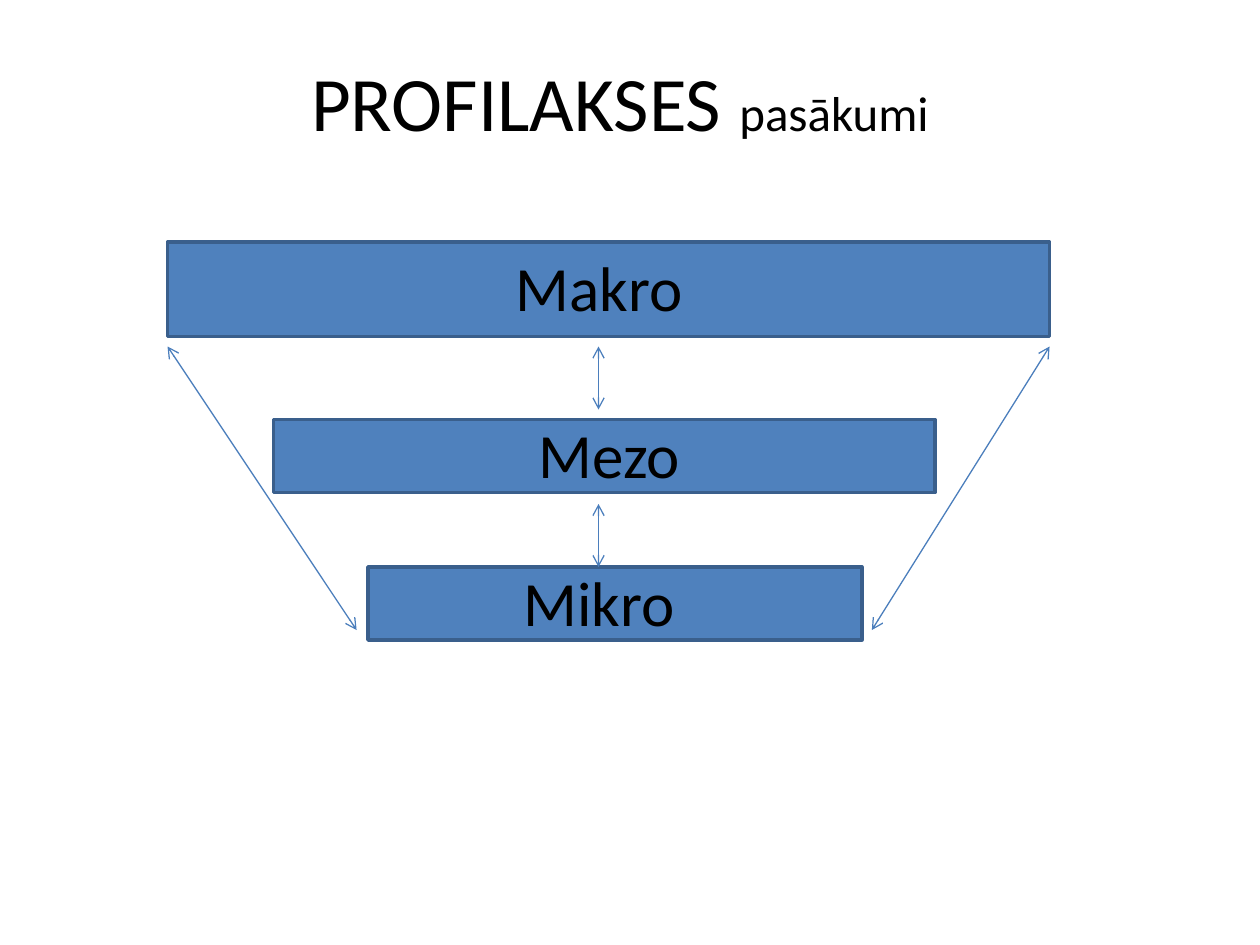
"""Build the slide on the three levels of prevention measures."""
from lxml.etree import SubElement
from pptx import Presentation
from pptx.dml.color import RGBColor
from pptx.enum.shapes import MSO_CONNECTOR, MSO_SHAPE
from pptx.enum.text import MSO_ANCHOR, PP_ALIGN
from pptx.oxml.ns import qn
from pptx.util import Inches, Pt

COLORS = {"bar": "4F81BD", "border": "3A5F8C", "arrow": "4B7EBC", "text": "000000"}
FONT = "Calibri"
TITLE = [("PROFILAKSES ", 44), ("pasākumi", 28)]
TITLE_BOX = (0.42, 0.17, 9, 1.25)
LABEL_SIZE = 36
LABEL_WIDTH, LABEL_HEIGHT = 5.17, 0.71
LEVELS = [
    {"name": "Makro", "bar": (1.33, 1.92, 7, 0.75), "label": (2.17, 1.92)},
    {"name": "Mezo", "bar": (2.17, 3.33, 5.25, 0.58), "label": (2.25, 3.25)},
    {"name": "Mikro", "bar": (2.92, 4.5, 3.92, 0.58), "label": (2.17, 4.42)},
]
ARROWS = [
    ((4.75, 3.25), (4.75, 2.75)),
    ((4.75, 4), (4.75, 4.5)),
    ((8.33, 2.75), (6.92, 5)),
    ((1.33, 2.75), (2.83, 5)),
]


def color(name):
    return RGBColor.from_string(COLORS[name])


def add_text(slide, runs, box, anchor=MSO_ANCHOR.TOP):
    shape = slide.shapes.add_textbox(*map(Inches, box))
    frame = shape.text_frame
    frame.word_wrap = True
    frame.vertical_anchor = anchor
    paragraph = frame.paragraphs[0]
    paragraph.alignment = PP_ALIGN.CENTER
    for text, size in runs:
        run = paragraph.add_run()
        run.text = text
        run.font.name = FONT
        run.font.size = Pt(size)
        run.font.color.rgb = color("text")


def add_bar(slide, box):
    shape = slide.shapes.add_shape(MSO_SHAPE.RECTANGLE, *map(Inches, box))
    shape.shadow.inherit = False
    shape.fill.solid()
    shape.fill.fore_color.rgb = color("bar")
    shape.line.color.rgb = color("border")
    shape.line.width = Pt(2)


def add_double_arrow(slide, start, end):
    connector = slide.shapes.add_connector(
        MSO_CONNECTOR.STRAIGHT, *map(Inches, start + end)
    )
    connector.line.color.rgb = color("arrow")
    connector.line.width = Pt(0.75)
    line = connector.line._get_or_add_ln()
    for tag in ("a:headEnd", "a:tailEnd"):
        SubElement(line, qn(tag), type="arrow")
    SubElement(connector._element.spPr, qn("a:effectLst"))


def main():
    presentation = Presentation()
    presentation.slide_width = Inches(10)
    presentation.slide_height = Inches(7.5)
    slide = presentation.slides.add_slide(presentation.slide_layouts[6])
    add_text(slide, TITLE, TITLE_BOX, anchor=MSO_ANCHOR.MIDDLE)
    for level in LEVELS:
        add_bar(slide, level["bar"])
    for start, end in ARROWS:
        add_double_arrow(slide, start, end)
    for level in LEVELS:
        box = (*level["label"], LABEL_WIDTH, LABEL_HEIGHT)
        add_text(slide, [(level["name"], LABEL_SIZE)], box)
    presentation.save("out.pptx")


if __name__ == "__main__":
    main()
